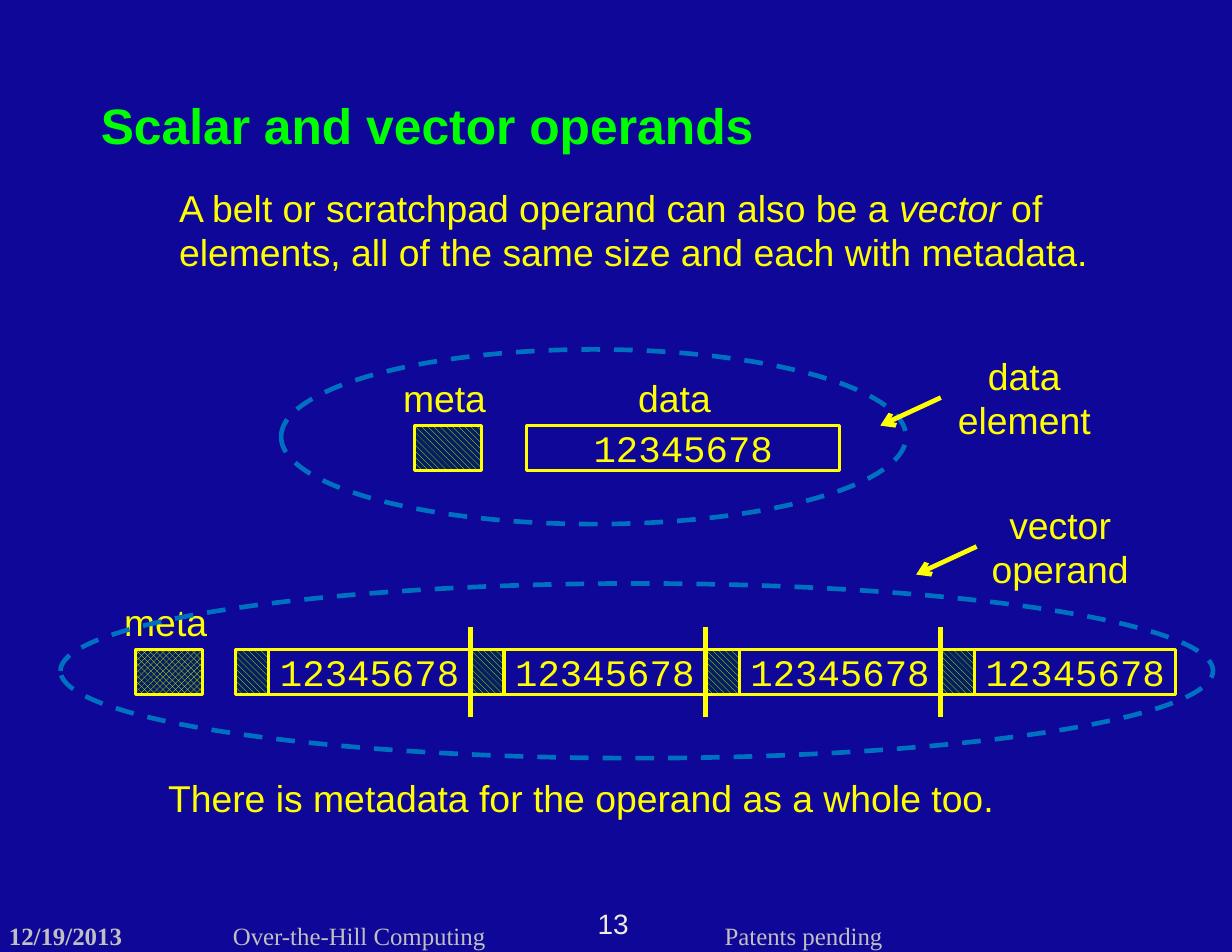
from pptx import Presentation
from pptx.dml.color import RGBColor
from pptx.enum.dml import MSO_LINE, MSO_PATTERN
from pptx.enum.shapes import MSO_CONNECTOR, MSO_SHAPE
from pptx.enum.text import MSO_ANCHOR, MSO_AUTO_SIZE, PP_ALIGN
from pptx.oxml.ns import qn
from pptx.util import Inches, Pt
from lxml.etree import SubElement

NAVY = RGBColor(0x0E, 0x07, 0x97)
GREEN = RGBColor(0x00, 0xFF, 0x00)
YELLOW = RGBColor(0xFF, 0xFF, 0x00)
BLUE = RGBColor(0x00, 0x70, 0xC0)
DARK_BLUE = RGBColor(0x00, 0x20, 0x60)
SILVER = RGBColor(0xC0, 0xC0, 0xC0)
IVORY = RGBColor(0xEE, 0xEC, 0xE1)

presentation = Presentation()
presentation.slide_width = Inches(11)
presentation.slide_height = Inches(8.5)
slide = presentation.slides.add_slide(presentation.slide_layouts[5])
slide.background.fill.solid()
slide.background.fill.fore_color.rgb = NAVY


def add_text(box, text, size=24, color=YELLOW, font="Arial", align=PP_ALIGN.LEFT,
             wrap=True, inset=None):
    """Set text in a box; a list of strings becomes runs of one paragraph."""
    box = slide.shapes.add_textbox(*map(Inches, box)) if isinstance(box, tuple) else box
    frame = box.text_frame
    frame.word_wrap = wrap
    if inset is not None:
        frame.margin_left = frame.margin_right = Inches(0)
        frame.margin_top = frame.margin_bottom = Inches(inset)
    paragraph = frame.paragraphs[0]
    paragraph.alignment = align
    for part in [text] if isinstance(text, str) else text:
        run = paragraph.add_run()
        run.text = part
        run.font.name = font
        run.font.size = Pt(size)
        run.font.color.rgb = color
    return paragraph


def add_outline(kind, box, color=YELLOW, width=2, pattern=None):
    shape = slide.shapes.add_shape(kind, *map(Inches, box))
    shape.shadow.inherit = False
    shape.line.color.rgb = color
    shape.line.width = Pt(width)
    if pattern is None:
        shape.fill.background()
    else:
        shape.fill.patterned()
        shape.fill.pattern = pattern
        shape.fill.fore_color.rgb = YELLOW
        shape.fill.back_color.rgb = DARK_BLUE
    return shape


# Footer
date = add_text((0.08, 8.22, 1.4, 0.26), "12/19/2013", 16, SILVER, "Times New Roman",
                inset=0)
date.runs[0].font.bold = True
add_text((5.32, 8.09, 0.31, 0.3), "13", 18, IVORY, align=PP_ALIGN.CENTER,
         wrap=False, inset=0)
for left, width, text in [(2.08, 2.46, "Over-the-Hill Computing"),
                          (6.47, 1.6, "Patents pending")]:
    add_text((left, 8.22, width, 0.26), text, 16, SILVER, "Times New Roman", inset=0)

# Title
title = slide.shapes.title
title.left, title.top, title.width, title.height = map(Inches, (0.8, 0.8, 9.39, 0.51))
title.text_frame.vertical_anchor = MSO_ANCHOR.TOP
title.text_frame.auto_size = MSO_AUTO_SIZE.NONE
add_text(title, "Scalar and vector operands", 32, GREEN).runs[0].font.bold = True

# Statements
statement = add_text((1.5, 1.6, 8.69, 0.91),
                     ["A belt or scratchpad operand can also be a ", "vector",
                      " of elements, all of the same size and each with metadata."])
statement.runs[1].font.italic = True
add_text((1.5, 6.9, 7.98, 0.53), "There is metadata for the operand as a whole too.",
         inset=0.02)

# Metadata boxes: one for the scalar, one for the vector, one per vector element
ROW, HEIGHT, PITCH = 5.8, 0.4, 2.1
element_lefts = [2.1 + PITCH * i for i in range(4)]
diagonal = MSO_PATTERN.WIDE_DOWNWARD_DIAGONAL
add_outline(MSO_SHAPE.RECTANGLE, (3.7, 3.8, 0.6, HEIGHT), pattern=diagonal)
add_outline(MSO_SHAPE.RECTANGLE, (1.21, ROW, 0.6, HEIGHT),
            pattern=MSO_PATTERN.LARGE_CHECKER_BOARD)
for left in element_lefts:
    add_outline(MSO_SHAPE.RECTANGLE, (left, ROW, 0.3, HEIGHT), pattern=diagonal)

# Data boxes
data_boxes = [(4.7, 3.8, 2.8, HEIGHT)]
data_boxes += [(left + 0.3, ROW, 1.8, HEIGHT) for left in element_lefts]
for box in data_boxes:
    shape = add_outline(MSO_SHAPE.RECTANGLE, box)
    shape.text_frame.vertical_anchor = MSO_ANCHOR.MIDDLE
    add_text(shape, "12345678", font="Courier New", align=PP_ALIGN.CENTER,
             wrap=False, inset=0)

# Labels
for left, top, width, text in [(3.5, 3.3, 0.95, "meta"), (5.6, 3.3, 0.86, "data"),
                               (1.01, 5.3, 0.95, "meta")]:
    add_text((left, top, width, 0.5), text, wrap=False)
callouts = [(8.4, 3.1, "data element"), (8.72, 4.43, "vector operand")]
for left, top, text in callouts:
    add_text((left, top, 1.49, 0.91), text, align=PP_ALIGN.CENTER)

# Dashed ellipses around the scalar and the vector, beneath the arrows
for box in [(2.51, 3.12, 5.58, 1.56), (0.54, 5.21, 10.29, 1.56)]:
    ellipse = add_outline(MSO_SHAPE.OVAL, box, BLUE, 3)
    ellipse.line.dash_style = MSO_LINE.DASH

# Element dividers and callout arrows
lines = [(left, 6.4, left, 5.6, False) for left in element_lefts[1:]]
lines += [(left, top + 0.45, left - 0.54, top + 0.7, True) for left, top, _ in callouts]
for *ends, has_arrow in lines:
    connector = slide.shapes.add_connector(MSO_CONNECTOR.STRAIGHT, *map(Inches, ends))
    connector.line.color.rgb = YELLOW
    connector.line.width = Pt(3)
    if has_arrow:
        SubElement(connector.line._get_or_add_ln(), qn("a:tailEnd"), type="arrow")
    SubElement(connector._element.spPr, qn("a:effectLst"))

presentation.save("out.pptx")
